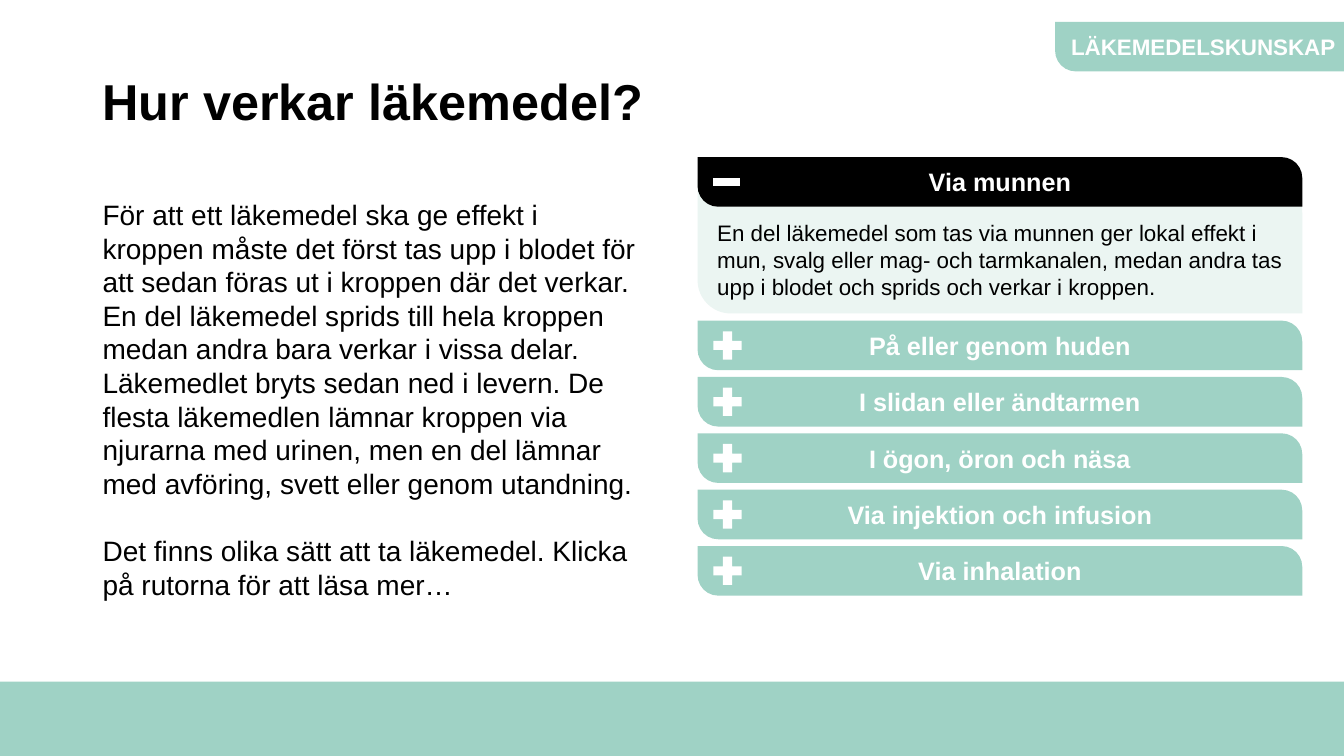
from dataclasses import dataclass

from pptx import Presentation
from pptx.dml.color import RGBColor
from pptx.enum.shapes import MSO_SHAPE
from pptx.enum.text import MSO_ANCHOR, MSO_AUTO_SIZE, PP_ALIGN
from pptx.oxml.ns import qn
from pptx.util import Cm, Pt

RECTANGLE = MSO_SHAPE.RECTANGLE
LEAF = MSO_SHAPE.ROUND_2_DIAG_RECTANGLE
PLUS = MSO_SHAPE.MATH_PLUS
MINUS = MSO_SHAPE.MATH_MINUS
TOP, MIDDLE = MSO_ANCHOR.TOP, MSO_ANCHOR.MIDDLE
LEFT, CENTER = PP_ALIGN.LEFT, PP_ALIGN.CENTER
NO_AUTOFIT = MSO_AUTO_SIZE.NONE


@dataclass(frozen=True)
class Theme:
    font: str = "Arial"
    mint: RGBColor = RGBColor(0x9F, 0xD2, 0xC5)
    pale: RGBColor = RGBColor(0xEB, 0xF5, 0xF2)
    black: RGBColor = RGBColor(0, 0, 0)
    white: RGBColor = RGBColor(255, 255, 255)
    title_size: int = 36
    body_size: int = 20
    bar_size: int = 18
    small_size: int = 16


THEME = Theme()

PAGE_WIDTH, PAGE_HEIGHT = 33.87, 19.05
BAR_LEFT, BAR_WIDTH, BAR_HEIGHT = 17.58, 15.24, 1.25
OPEN_TOP, CLOSED_TOP, BAR_PITCH = 3.96, 8.08, 1.42
BAR_ROUNDING, PANEL_ROUNDING = 0.417, 0.248

TITLE = "Hur verkar läkemedel?"
BODY = [
    "För att ett läkemedel ska ge effekt i kroppen måste det först tas upp i "
    "blodet för att sedan föras ut i kroppen där det verkar. En del läkemedel "
    "sprids till hela kroppen medan andra bara verkar i vissa delar. Läkemedlet "
    "bryts sedan ned i levern. De flesta läkemedlen lämnar kroppen via njurarna "
    "med urinen, men en del lämnar med avföring, svett eller genom utandning.",
    "Det finns olika sätt att ta läkemedel. Klicka på rutorna för att läsa mer…",
]
OPEN_TEXT = (
    "En del läkemedel som tas via munnen ger lokal effekt i mun, svalg eller "
    "mag- och tarmkanalen, medan andra tas upp i blodet och sprids och verkar "
    "i kroppen."
)
CLOSED_ROUTES = [
    "På eller genom huden",
    "I slidan eller ändtarmen",
    "I ögon, öron och näsa",
    "Via injektion och infusion",
    "Via inhalation",
]


def write(para, text, size, color, bold=False, align=LEFT):
    para.alignment = align
    span = para.add_run()
    span.text = text
    span.font.name = THEME.font
    span.font.size = Pt(size)
    span.font.bold = bold
    span.font.color.rgb = color


def add_block(page, kind, left, top, width, height, fill):
    box = page.shapes.add_shape(kind, Cm(left), Cm(top), Cm(width), Cm(height))
    box.shadow.inherit = False
    box.fill.solid()
    box.fill.fore_color.rgb = fill
    box.line.fill.background()
    return box


def add_leaf(page, left, top, width, height, fill, rounding, anchor=MIDDLE):
    """Add a text block with its top right and bottom left corners rounded."""
    box = add_block(page, LEAF, left, top, width, height, fill)
    box.adjustments[0] = 0
    box.adjustments[1] = rounding
    box.text_frame.word_wrap = True
    box.text_frame.vertical_anchor = anchor
    return box


def add_bar(page, top, label, fill, sign, sign_size):
    bar = add_leaf(page, BAR_LEFT, top, BAR_WIDTH, BAR_HEIGHT, fill, BAR_ROUNDING)
    write(bar.text_frame.paragraphs[0], label, THEME.bar_size, THEME.white, True, CENTER)
    inset = (BAR_HEIGHT - sign_size) / 2
    add_block(page, sign, BAR_LEFT + 0.27, top + inset, sign_size, sign_size, THEME.white)


def place(placeholder, left, top, width, height):
    placeholder.left, placeholder.top = Cm(left), Cm(top)
    placeholder.width, placeholder.height = Cm(width), Cm(height)
    frame = placeholder.text_frame
    frame.word_wrap = True
    frame.auto_size = NO_AUTOFIT
    frame.vertical_anchor = TOP
    return frame


def remove_bullet(para):
    properties = para._p.get_or_add_pPr()
    properties.set("marL", "0")
    properties.set("indent", "0")
    properties.append(properties.makeelement(qn("a:buNone"), {}))


def add_title(page):
    para = place(page.shapes.title, 2.33, 1.8, 29.21, 2.79).paragraphs[0]
    para.line_spacing = 0.9
    write(para, TITLE, THEME.title_size, THEME.black, True)


def add_body(page):
    frame = place(page.placeholders[1], 2.33, 4.85, 13.97, 10.52)
    for index, text in enumerate(BODY):
        para = frame.add_paragraph() if index else frame.paragraphs[0]
        remove_bullet(para)
        para.space_before = Pt(24 if index else 0)
        write(para, text, THEME.body_size, THEME.black)


def add_tag(page):
    tag = add_leaf(page, 26.59, 0.55, 9.2, BAR_HEIGHT, THEME.mint, BAR_ROUNDING)
    write(tag.text_frame.paragraphs[0], "LÄKEMEDELSKUNSKAP",
          THEME.small_size, THEME.white, True)


def add_open_panel(page):
    panel = add_leaf(page, BAR_LEFT, 4.52, BAR_WIDTH, 3.38, THEME.pale, PANEL_ROUNDING, TOP)
    panel.text_frame.margin_top = Cm(0.76)
    write(panel.text_frame.paragraphs[0], OPEN_TEXT, THEME.small_size, THEME.black)
    add_bar(page, OPEN_TOP, "Via munnen", THEME.black, MINUS, 0.92)


def main():
    deck = Presentation()
    deck.slide_width, deck.slide_height = Cm(PAGE_WIDTH), Cm(PAGE_HEIGHT)
    page = deck.slides.add_slide(deck.slide_layouts[1])
    add_block(page, RECTANGLE, 0, 17.18, PAGE_WIDTH, PAGE_HEIGHT - 17.18, THEME.mint)
    add_title(page)
    add_tag(page)
    add_body(page)
    add_open_panel(page)
    for index, route in enumerate(CLOSED_ROUTES):
        add_bar(page, CLOSED_TOP + index * BAR_PITCH, route, THEME.mint, PLUS, 0.97)
    deck.save("out.pptx")


if __name__ == "__main__":
    main()
